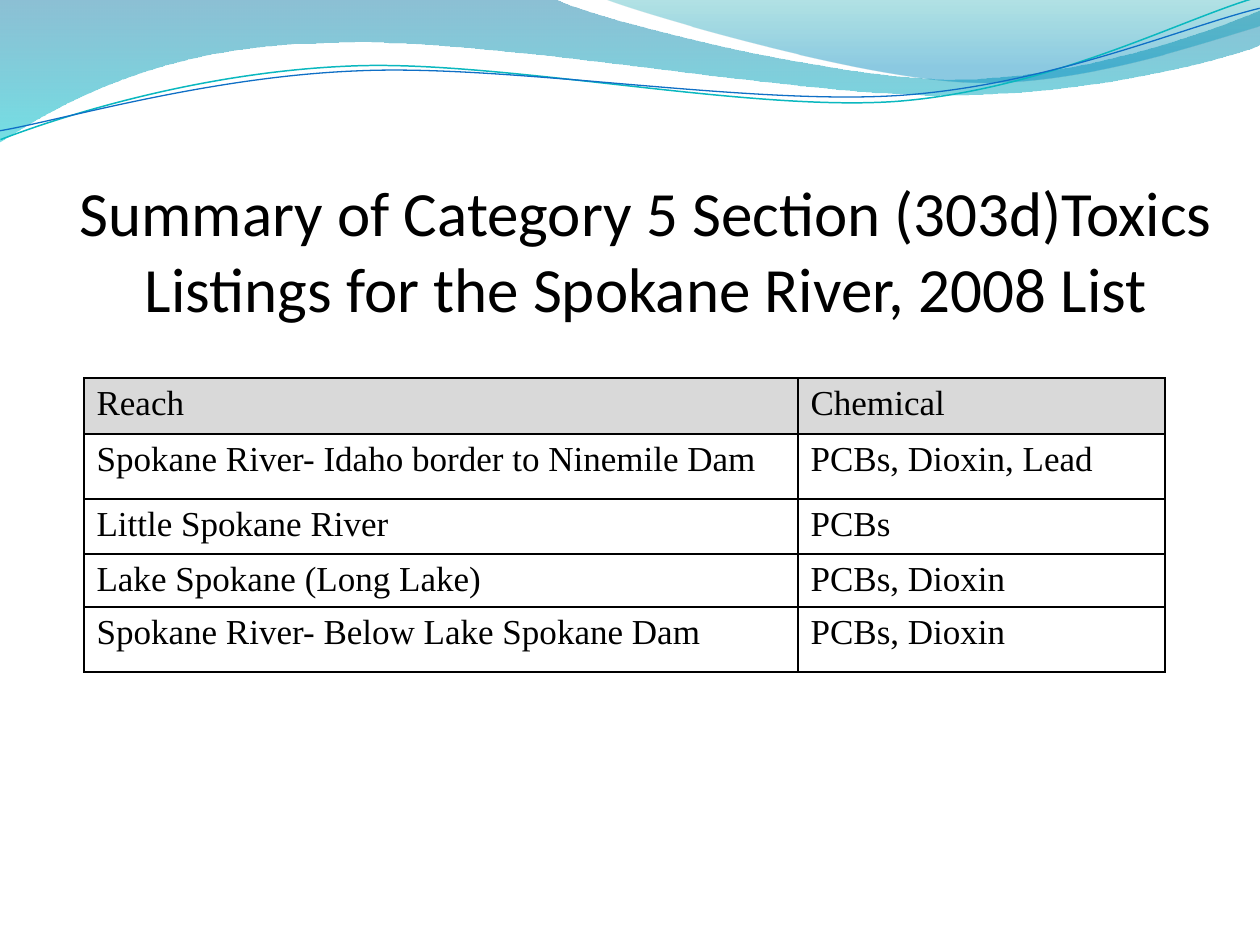
from lxml.etree import SubElement
from pptx import Presentation
from pptx.dml.color import RGBColor
from pptx.enum.text import MSO_ANCHOR, MSO_AUTO_SIZE, PP_ALIGN
from pptx.oxml import parse_xml
from pptx.oxml.ns import nsdecls, qn
from pptx.util import Emu, Pt

SCALE = 914400 / 126
BLACK = RGBColor(0x00, 0x00, 0x00)
HEADER_GRAY = RGBColor(0xD9, 0xD9, 0xD9)
TEAL = RGBColor(0x0A, 0xB8, 0xBF)
BLUE = RGBColor(0x0F, 0x6F, 0xC6)
DEEP_BLUE = RGBColor(0x00, 0x74, 0xA1)
AQUA = RGBColor(0x00, 0xC6, 0xCF)
SEA_GREEN = RGBColor(0x00, 0xA1, 0xA9)
SKY_BLUE = RGBColor(0x00, 0x8B, 0xBF)

STRAND_TILT = -2.7
TITLE = "Summary of Category 5 Section (303d)Toxics Listings for the Spokane River, 2008 List"
LISTINGS = [
    ("Reach", "Chemical"),
    ("Spokane River- Idaho border to Ninemile Dam", "PCBs, Dioxin, Lead"),
    ("Little Spokane River", "PCBs"),
    ("Lake Spokane (Long Lake)", "PCBs, Dioxin"),
    ("Spokane River- Below Lake Spokane Dam", "PCBs, Dioxin"),
]
COLUMN_WIDTHS = (714, 367)
ROW_HEIGHTS = (56, 65, 55, 53, 65)

BROAD_WAVE = [
    (0, 0), (554, -1),
    (600, 21, 837, 79, 955, 79), (1075, 79, 1207, 33, 1260, 11),
    (1261, 45),
    (1239, 55, 1096, 96, 940, 95), (784, 95, 481, 35, 324, 43),
    (161, 45, 58, 105, -1, 142),
]
RIGHT_WAVE = [
    (604, -1),
    (641, 14, 859, 78, 969, 82), (1079, 87, 1211, 40, 1260, 26),
    (1260, 0),
]
TEAL_STRAND = [
    (-2, 110),
    (58, 90, 199, 52, 350, 53), (499, 53, 745, 118, 896, 114),
    (1049, 109, 1184, 45, 1260, 27),
]
BLUE_STRAND = [
    (-2, 101),
    (57, 94, 207, 57, 357, 58), (509, 58, 750, 112, 902, 108),
    (1052, 104, 1188, 52, 1262, 38),
]


def px(length):
    return Emu(round(length * SCALE))


def add_outline(shapes, segments, close):
    anchors = [(px(segment[-2]), px(segment[-1])) for segment in segments]
    builder = shapes.build_freeform(*anchors[0])
    builder.add_line_segments(anchors[1:], close=close)
    shape = builder.convert_to_shape()
    shape.shadow.inherit = False
    lines = list(shape._element.iter(qn("a:lnTo")))
    for line, segment in zip(lines, segments[1:]):
        if len(segment) == 6:
            line.tag = qn("a:cubicBezTo")
            end = line[0]
            for x, y in (segment[0:2], segment[2:4]):
                control = SubElement(line, qn("a:pt"))
                control.set("x", str(px(x) - shape.left))
                control.set("y", str(px(y) - shape.top))
            line.append(end)
    return shape


def add_wave(page, segments, stops):
    wave = add_outline(page.shapes, segments, True)
    wave.line.fill.background()
    stop_xml = "".join(
        f'<a:gs pos="{position * 1000}"><a:srgbClr val="{color}">'
        f'<a:alpha val="{opacity * 1000}"/></a:srgbClr></a:gs>'
        for position, color, opacity in stops
    )
    gradient = parse_xml(
        f'<a:gradFill {nsdecls("a")} rotWithShape="1"><a:gsLst>{stop_xml}</a:gsLst>'
        '<a:lin ang="5400000" scaled="0"/></a:gradFill>'
    )
    wave._element.spPr.find(qn("a:custGeom")).addnext(gradient)


def add_strand(group, segments, color, width):
    strand = add_outline(group.shapes, segments, False)
    strand.rotation = STRAND_TILT
    strand.fill.background()
    strand.line.color.rgb = color
    strand.line.width = Pt(width)


def format_text(paragraph, font_name, size):
    for span in paragraph.runs:
        span.font.name = font_name
        span.font.size = Pt(size)
        span.font.color.rgb = BLACK


def set_title(page):
    title = page.shapes.title
    title.left, title.top, title.width, title.height = map(px, (74, 168, 1144, 157))
    frame = title.text_frame
    frame.text = TITLE
    frame.word_wrap = True
    frame.auto_size = MSO_AUTO_SIZE.NONE
    frame.vertical_anchor = MSO_ANCHOR.BOTTOM
    frame.margin_left = frame.margin_right = frame.margin_bottom = 0
    frame.margin_top = px(6)
    paragraph = frame.paragraphs[0]
    paragraph.alignment = PP_ALIGN.CENTER
    format_text(paragraph, "Calibri", 36)


def add_borders(cell):
    properties = cell._tc.get_or_add_tcPr()
    for side in ("a:lnL", "a:lnR", "a:lnT", "a:lnB"):
        border = SubElement(properties, qn(side), w=str(Pt(1)))
        fill = SubElement(border, qn("a:solidFill"))
        SubElement(fill, qn("a:srgbClr"), val=str(BLACK))


def add_listings(page):
    frame = page.shapes.add_table(
        len(LISTINGS), len(COLUMN_WIDTHS), px(84), px(378),
        px(sum(COLUMN_WIDTHS)), px(sum(ROW_HEIGHTS)),
    )
    table = frame.table
    table.horz_banding = False
    table.first_row = False
    for column, width in zip(table.columns, COLUMN_WIDTHS):
        column.width = px(width)
    for row_index, (row, height) in enumerate(zip(table.rows, ROW_HEIGHTS)):
        row.height = px(height)
        for cell, text in zip(row.cells, LISTINGS[row_index]):
            cell.text_frame.text = text
            format_text(cell.text_frame.paragraphs[0], "Times New Roman", 20)
            add_borders(cell)
            if row_index == 0:
                cell.fill.solid()
                cell.fill.fore_color.rgb = HEADER_GRAY
            else:
                cell.fill.background()


def main():
    deck = Presentation()
    deck.slide_width, deck.slide_height = px(1260), px(945)
    page = deck.slides.add_slide(deck.slide_layouts[5])
    add_wave(page, BROAD_WAVE, [(0, DEEP_BLUE, 45), (100, AQUA, 55)])
    add_wave(page, RIGHT_WAVE, [(0, SEA_GREEN, 30), (80, SKY_BLUE, 45)])
    strands = page.shapes.add_group_shape()
    add_strand(strands, TEAL_STRAND, TEAL, 0.85)
    add_strand(strands, BLUE_STRAND, BLUE, 0.75)
    set_title(page)
    add_listings(page)
    deck.save("out.pptx")


if __name__ == "__main__":
    main()
